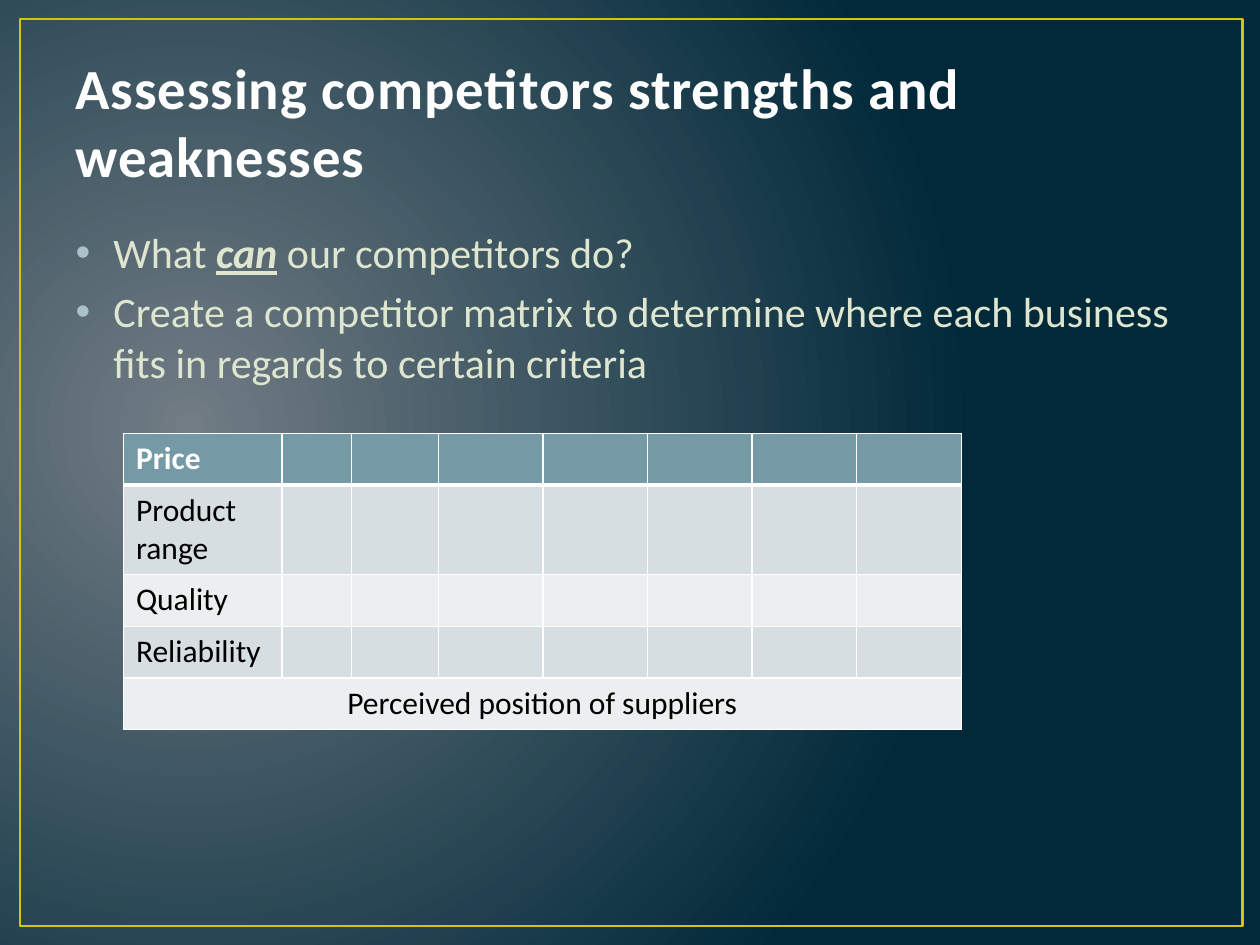
from lxml.etree import SubElement
from pptx import Presentation
from pptx.dml.color import RGBColor
from pptx.enum.shapes import MSO_SHAPE as Shape
from pptx.enum.text import MSO_ANCHOR as Anchor, PP_ALIGN as Align
from pptx.oxml.ns import qn
from pptx.util import Inches, Pt

FONT = "Calibri"
COLUMNS = [1.26, 0.55, 0.69] + [0.83] * 5
CRITERIA = ["Price", "Product range", "Quality", "Reliability"]
CAPTION = "Perceived position of suppliers"
ROW_FILLS = ["759AA5", "D6DEE1", "ECEFF0", "D6DEE1", "ECEFF0"]


def rgb(value):
    return RGBColor.from_string(value)


def add_node(parent, tag, **attributes):
    return SubElement(parent, qn(tag), {key: str(value) for key, value in attributes.items()})


def add_span(para, text, size, color, bold=False, italic=False, underline=False, spacing=0):
    span = para.add_run()
    span.text = text
    font = span.font
    font.name, font.size = FONT, Pt(size)
    font.bold, font.italic, font.underline = bold, italic, underline
    font.color.rgb = rgb(color)
    if spacing:
        span._r.get_or_add_rPr().set("spc", str(int(spacing * 100)))


def place(box, left, top, width, height):
    box.left, box.top = Inches(left), Inches(top)
    box.width, box.height = Inches(width), Inches(height)


def paint_background(page):
    page.background.fill.solid()
    holder = page.element.xpath(".//p:bgPr")[0]
    holder.remove(holder[0])
    gradient = add_node(holder, "a:gradFill", rotWithShape=1)
    holder.insert(0, gradient)
    stops = add_node(gradient, "a:gsLst")
    for position, color in ((0, "717C84"), (100000, "01293A")):
        add_node(add_node(stops, "a:gs", pos=position), "a:srgbClr", val=color)
    circle = add_node(gradient, "a:path", path="circle")
    add_node(circle, "a:fillToRect", l=15000, t=50000, r=85000, b=60000)


def add_frame(page):
    frame = page.shapes.add_shape(
        Shape.RECTANGLE, Inches(0.16), Inches(0.15), Inches(9.7), Inches(7.2))
    frame.shadow.inherit = False
    frame.fill.background()
    frame.line.color.rgb = rgb("CFC60D")
    frame.line.width = Pt(1.5)


def fill_title(box):
    place(box, 0.5, 0.3, 9, 1.25)
    box.text_frame.vertical_anchor = Anchor.BOTTOM
    para = box.text_frame.paragraphs[0]
    para.alignment = Align.LEFT
    add_span(para, "Assessing competitors strengths and weaknesses",
             32.4, "FEFEFE", bold=True, spacing=0.5)


def add_bullet(para):
    properties = para._p.get_or_add_pPr()
    properties.set("marL", str(Inches(0.3)))
    properties.set("indent", str(Inches(-0.3)))
    add_node(add_node(properties, "a:buClr"), "a:srgbClr", val="ACC2C9")
    add_node(properties, "a:buFont", typeface="Arial")
    add_node(properties, "a:buChar", char="•")


def fill_body(box):
    place(box, 0.5, 1.75, 9, 4.95)
    emphasis = {"bold": True, "italic": True, "underline": True}
    items = [
        [("What ", {}), ("can", emphasis), (" our competitors do?", {})],
        [("Create a competitor matrix to determine where each business "
          "fits in regards to certain criteria", {})],
    ]
    frame = box.text_frame
    for index, spans in enumerate(items):
        para = frame.add_paragraph() if index else frame.paragraphs[0]
        add_bullet(para)
        for text, style in spans:
            add_span(para, text, 24, "DFE6D0", **style)


def format_cell(cell, fill, top, bottom):
    properties = cell._tc.get_or_add_tcPr()
    for side, width in (("L", 1), ("R", 1), ("T", top), ("B", bottom)):
        line = add_node(properties, f"a:ln{side}", w=Pt(width))
        add_node(add_node(line, "a:solidFill"), "a:srgbClr", val="FFFFFF")
    cell.fill.solid()
    cell.fill.fore_color.rgb = rgb(fill)


def add_matrix(page):
    table = page.shapes.add_table(
        len(ROW_FILLS), len(COLUMNS), Inches(0.98), Inches(3.44),
        Inches(sum(COLUMNS)), Inches(0.41 * len(ROW_FILLS))).table
    for column, width in zip(table.columns, COLUMNS):
        column.width = Inches(width)
    for index, (row, fill) in enumerate(zip(table.rows, ROW_FILLS)):
        row.height = Inches(0.41)
        for cell in row.cells:
            format_cell(cell, fill, top=3 if index == 1 else 1, bottom=3 if index == 0 else 1)
    last = len(CRITERIA)
    table.cell(last, 0).merge(table.cell(last, len(COLUMNS) - 1))
    for index, text in enumerate(CRITERIA + [CAPTION]):
        para = table.cell(index, 0).text_frame.paragraphs[0]
        para.alignment = Align.CENTER if index == last else Align.LEFT
        add_span(para, text, 18, "000000" if index else "FFFFFF", bold=index == 0)


def main():
    deck = Presentation()
    deck.slide_width, deck.slide_height = Inches(10), Inches(7.5)
    page = deck.slides.add_slide(deck.slide_layouts[1])
    paint_background(page)
    add_frame(page)
    fill_title(page.shapes.title)
    fill_body(page.placeholders[1])
    add_matrix(page)
    deck.save("out.pptx")


if __name__ == "__main__":
    main()
